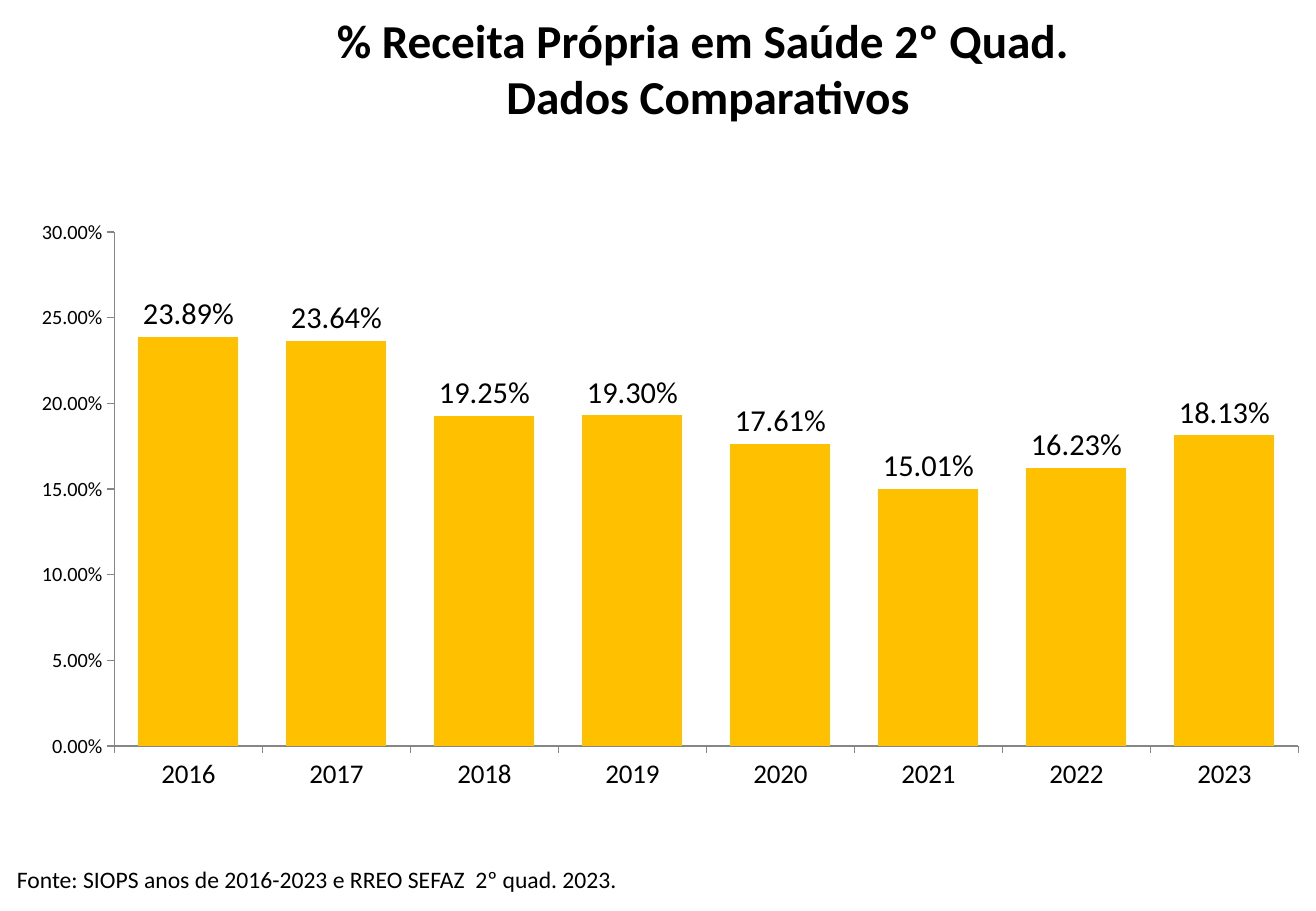
from lxml.etree import SubElement
from pptx import Presentation
from pptx.chart.data import CategoryChartData
from pptx.dml.color import RGBColor
from pptx.enum.chart import XL_CHART_TYPE, XL_LABEL_POSITION, XL_TICK_MARK
from pptx.enum.text import MSO_ANCHOR, PP_ALIGN
from pptx.oxml.ns import qn
from pptx.util import Inches, Pt

WIDE, HIGH = 10.83, 7.5
FACE, BLACK, GOLD, GREY = "Calibri", "000000", "FFC000", "868686"

TITLE = ["% Receita Própria em Saúde 2º Quad. ", "Dados Comparativos"]
SOURCE = "Fonte: SIOPS anos de 2016-2023 e RREO SEFAZ  2º quad. 2023."
SHARES = {
    "2016": 0.2389, "2017": 0.2364, "2018": 0.1925, "2019": 0.1930,
    "2020": 0.1761, "2021": 0.1501, "2022": 0.1623, "2023": 0.1813,
}
PLOT = {"x": 0.076, "y": 0.026, "w": 0.924, "h": 0.838}

# left, top, width, height in inches
TITLE_BOX = (0.8, 0.04, 10.05, 1.04)
CHART_BOX = (0.14, 1.78, 10.55, 5.05)
SOURCE_BOX = (0.04, 7.07, 9.06, 0.34)


def color(code):
    return RGBColor.from_string(code)


def place(box):
    return [Inches(n) for n in box]


def style(font, size, bold=False):
    font.name, font.size, font.bold = FACE, Pt(size), bold
    font.color.rgb = color(BLACK)


def write(frame, lines, size, align, bold=False):
    frame.word_wrap = True
    frame.text = "\n".join(lines)
    for para in frame.paragraphs:
        para.alignment = align
        for run in para.runs:
            style(run.font, size, bold)


def fix_plot(chart):
    """Pin the inner plot area to the shares in PLOT."""
    area = chart.plots[0]._element.getparent()
    for old in area.findall(qn("c:layout")):
        area.remove(old)
    layout = SubElement(area, qn("c:layout"))
    area.insert(0, layout)
    manual = SubElement(layout, qn("c:manualLayout"))
    parts = {"layoutTarget": "inner", "xMode": "edge", "yMode": "edge", **PLOT}
    for name, value in parts.items():
        SubElement(manual, qn("c:" + name)).set("val", str(value))


def add_bars(slide):
    data = CategoryChartData(number_format="0.00%")
    data.categories = list(SHARES)
    data.add_series("% Receita Própria", list(SHARES.values()))
    chart = slide.shapes.add_chart(
        XL_CHART_TYPE.COLUMN_CLUSTERED, *place(CHART_BOX), data).chart
    chart.has_title = chart.has_legend = False
    style(chart.font, 10)

    for axis, size in ((chart.category_axis, 16), (chart.value_axis, 12)):
        axis.has_major_gridlines = False
        axis.major_tick_mark = XL_TICK_MARK.OUTSIDE
        axis.minor_tick_mark = XL_TICK_MARK.NONE
        axis.format.line.color.rgb = color(GREY)
        axis.format.line.width = Pt(0.75)
        style(axis.tick_labels.font, size)
    scale = chart.value_axis
    scale.minimum_scale, scale.maximum_scale, scale.major_unit = 0, 0.3, 0.05
    scale.tick_labels.number_format = "0.00%"
    scale.tick_labels.number_format_is_linked = False

    plot = chart.plots[0]
    plot.gap_width, plot.vary_by_categories = 48, False
    fill = plot.series[0].format.fill
    fill.solid()
    fill.fore_color.rgb = color(GOLD)
    plot.has_data_labels = True
    labels = plot.data_labels
    labels.show_value = True
    labels.position = XL_LABEL_POSITION.OUTSIDE_END
    labels.number_format, labels.number_format_is_linked = "0.00%", False
    style(labels.font, 18)
    fix_plot(chart)


def main():
    deck = Presentation()
    deck.slide_width, deck.slide_height = Inches(WIDE), Inches(HIGH)
    slide = deck.slides.add_slide(deck.slide_layouts[5])

    title = slide.shapes.title
    title.left, title.top, title.width, title.height = place(TITLE_BOX)
    title.text_frame.vertical_anchor = MSO_ANCHOR.TOP
    write(title.text_frame, TITLE, 28, PP_ALIGN.CENTER, bold=True)

    add_bars(slide)
    note = slide.shapes.add_textbox(*place(SOURCE_BOX))
    write(note.text_frame, [SOURCE], 14, PP_ALIGN.JUSTIFY)
    deck.save("out.pptx")


if __name__ == "__main__":
    main()
